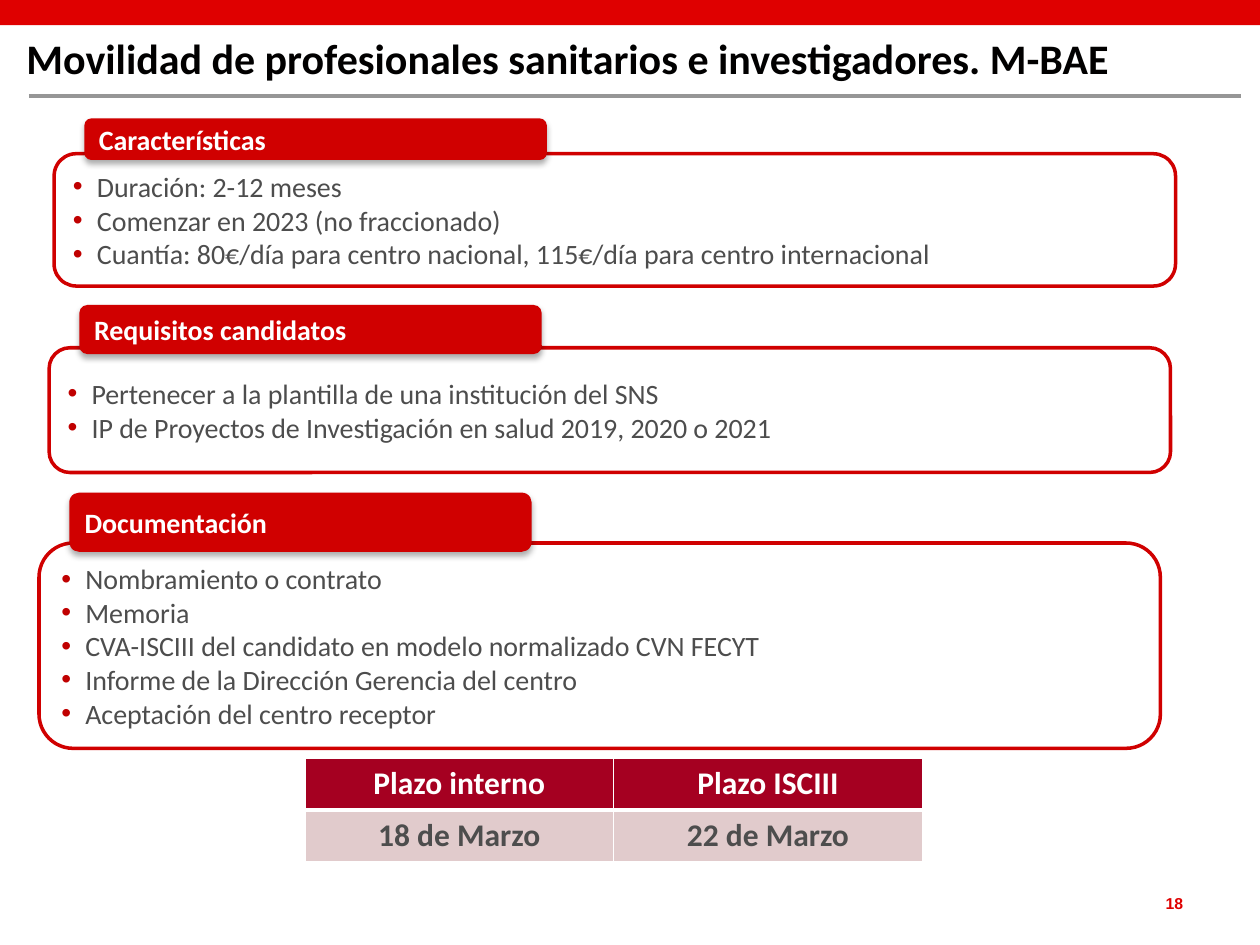
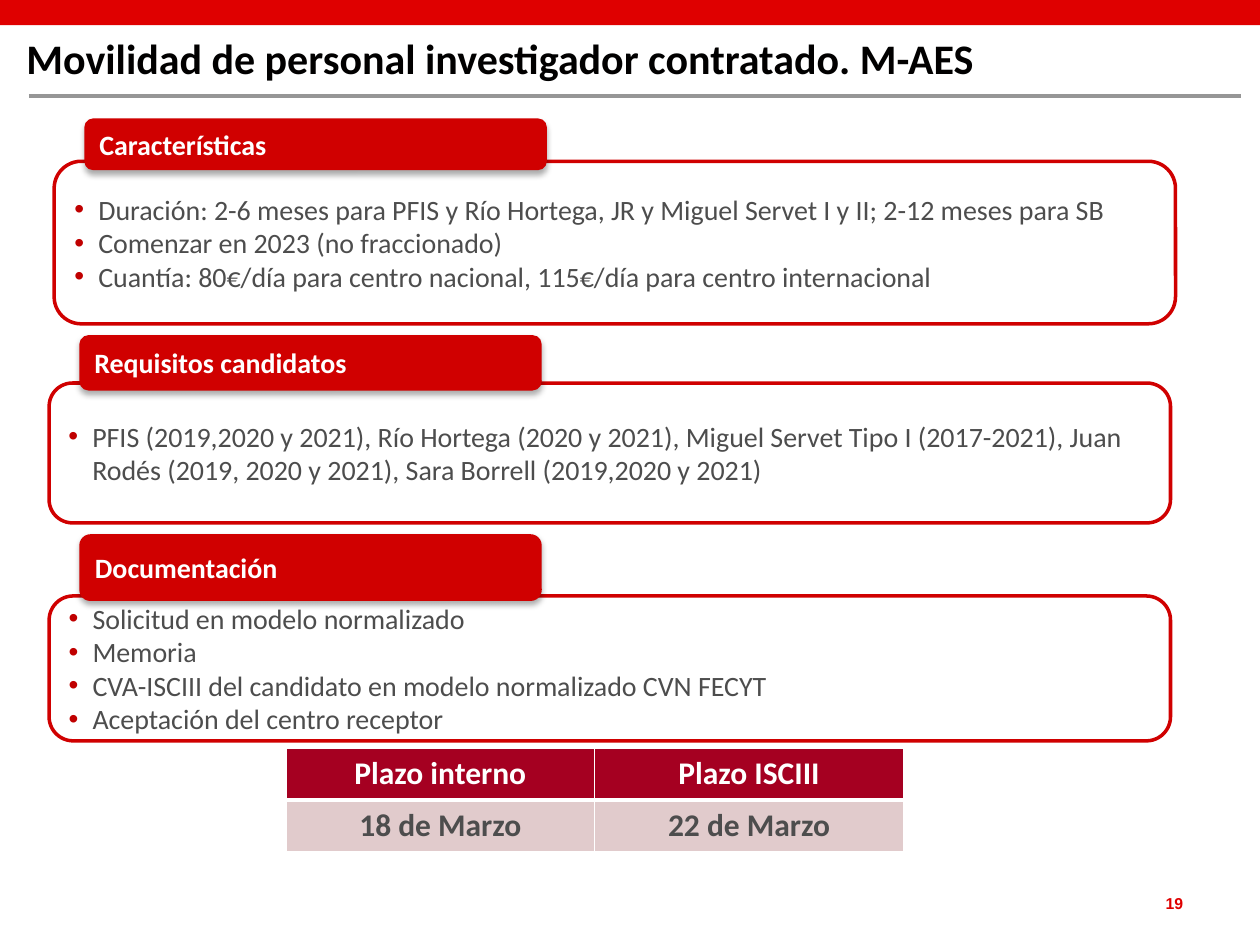
from lxml.etree import SubElement as sub
from pptx import Presentation
from pptx.dml.color import RGBColor as RGB
from pptx.enum.shapes import MSO_CONNECTOR as LINE, MSO_SHAPE as SHAPE
from pptx.enum.text import MSO_ANCHOR as ANCHOR, PP_ALIGN as ALIGN
from pptx.oxml.ns import qn
from pptx.util import Inches, Pt

BAND = RGB(0xDF, 0x00, 0x00)
RED = RGB(0xD0, 0x00, 0x00)
BULLET = "C00000"
WINE = RGB(0xA5, 0x00, 0x21)
ROSE = RGB(0xE1, 0xCB, 0xCC)
RULE = RGB(0x96, 0x96, 0x96)
INK = RGB(0x01, 0x00, 0x00)
GREY = RGB(0x4D, 0x4D, 0x4D)
WHITE = RGB(0xFF, 0xFF, 0xFF)

BOX_W, TAB_W, TAB_IN = 8.9, 3.67, 0.24
COL_W, ROW_H = 2.45, 0.41

# Each panel: heading, box left, tab top and height, box top and height, items
SLIDES = [
    ("Movilidad de profesionales sanitarios e investigadores. M-BAE", 18, (2.42, 6.02), [
        ("Características", 0.43, 0.94, 0.33, 1.22, 1.05, [
            "Duración: 2-12 meses",
            "Comenzar en 2023 (no fraccionado)",
            "Cuantía: 80€/día para centro nacional, 115€/día para centro internacional"]),
        ("Requisitos candidatos", 0.39, 2.42, 0.39, 2.76, 0.99, [
            "Pertenecer a la plantilla de una institución del SNS",
            "IP de Proyectos de Investigación en salud 2019, 2020 o 2021"]),
        ("Documentación", 0.31, 3.91, 0.47, 4.31, 1.63, [
            "Nombramiento o contrato",
            "Memoria",
            "CVA-ISCIII del candidato en modelo normalizado CVN FECYT",
            "Informe de la Dirección Gerencia del centro",
            "Aceptación del centro receptor"]),
    ]),
    ("Movilidad de personal investigador contratado. M-AES", 19, (2.27, 5.94), [
        ("Características", 0.43, 0.94, 0.41, 1.28, 1.29, [
            "Duración: 2-6 meses para PFIS y Río Hortega, JR y Miguel Servet I y II; "
            "2-12 meses para SB",
            "Comenzar en 2023 (no fraccionado)",
            "Cuantía: 80€/día para centro nacional, 115€/día para centro internacional"]),
        ("Requisitos candidatos", 0.39, 2.66, 0.44, 3.04, 1.11, [
            "PFIS (2019,2020 y 2021), Río Hortega (2020 y 2021), Miguel Servet Tipo I "
            "(2017-2021), Juan Rodés (2019, 2020 y 2021), Sara Borrell (2019,2020 y 2021)"]),
        ("Documentación", 0.39, 4.24, 0.53, 4.73, 1.15, [
            "Solicitud en modelo normalizado",
            "Memoria",
            "CVA-ISCIII del candidato en modelo normalizado CVN FECYT",
            "Aceptación del centro receptor"]),
    ]),
]
DATES = [("Plazo interno", "Plazo ISCIII"), ("18 de Marzo", "22 de Marzo")]


def write(para, text, size, color, bold=False, align=ALIGN.LEFT, font="Calibri"):
    para.alignment = align
    run = para.add_run()
    run.text = text
    run.font.name, run.font.size, run.font.bold = font, Pt(size), bold
    run.font.color.rgb = color


def block(shapes, kind, left, top, width, height, fill=None, line=None):
    """Add a preset shape with a plain fill or outline and no shadow."""
    shape = shapes.add_shape(kind, Inches(left), Inches(top), Inches(width), Inches(height))
    shape.shadow.inherit = False
    if fill is None:
        shape.fill.background()
    else:
        shape.fill.solid()
        shape.fill.fore_color.rgb = fill
    if line is None:
        shape.line.fill.background()
    else:
        shape.line.color.rgb = line
        shape.line.width = Pt(2)
    shape.text_frame.word_wrap = True
    shape.text_frame.vertical_anchor = ANCHOR.MIDDLE
    return shape


prs = Presentation()
prs.slide_width, prs.slide_height = Inches(10), Inches(7.5)

for title, number, (date_x, date_y), panels in SLIDES:
    shapes = prs.slides.add_slide(prs.slide_layouts[6]).shapes

    # Band, rule, page number and title
    block(shapes, SHAPE.RECTANGLE, 0, 0, 10, 0.2, fill=BAND)
    rule = shapes.add_connector(LINE.STRAIGHT, Inches(0.23), Inches(0.76),
                                Inches(9.85), Inches(0.76))
    rule.line.color.rgb = RULE
    rule.line.width = Pt(2.25)
    sub(rule._element.spPr, qn("a:effectLst"))

    for left, top, width, height, inset, style in [
        (8.45, 7.09, 0.94, 0.15, 0, (str(number), 9, BAND, True, ALIGN.RIGHT, "Arial")),
        (0.16, 0.21, 9.73, 0.9, 0.05, (title, 24, INK, True)),
    ]:
        frame = shapes.add_textbox(Inches(left), Inches(top), Inches(width),
                                   Inches(height)).text_frame
        frame.word_wrap = True
        frame.margin_left = frame.margin_right = Inches(inset)
        frame.margin_top = frame.margin_bottom = Inches(inset)
        write(frame.paragraphs[0], *style)

    # Outlined boxes, each with a red tab over its top edge
    for heading, left, tab_y, tab_h, box_y, box_h, items in panels:
        box = block(shapes, SHAPE.ROUNDED_RECTANGLE, left, box_y, BOX_W, box_h, line=RED)
        frame = box.text_frame
        for i, item in enumerate(items):
            para = frame.add_paragraph() if i else frame.paragraphs[0]
            props = para._p.get_or_add_pPr()
            props.set("marL", str(Inches(0.19)))
            props.set("indent", str(-Inches(0.19)))
            sub(sub(props, qn("a:buClr")), qn("a:srgbClr"), val=BULLET)
            sub(props, qn("a:buFont"), typeface="Arial")
            sub(props, qn("a:buChar"), char="•")
            write(para, item, 16, GREY)

        tab = block(shapes, SHAPE.ROUNDED_RECTANGLE, left + TAB_IN, tab_y, TAB_W, tab_h,
                    fill=RED)
        glow = sub(tab._element.spPr.find(qn("a:effectLst")), qn("a:outerShdw"),
                   blurRad=str(Pt(3.5)), dist=str(Pt(2.2)), dir="5400000", rotWithShape="0")
        shade = sub(glow, qn("a:srgbClr"), val="000000")
        sub(shade, qn("a:alpha"), val="32000")
        write(tab.text_frame.paragraphs[0], heading, 16, WHITE, True)

    # Deadlines
    table = shapes.add_table(2, 2, Inches(date_x), Inches(date_y),
                             Inches(2 * COL_W), Inches(2 * ROW_H)).table
    for r, row in enumerate(DATES):
        table.rows[r].height = Inches(ROW_H)
        for c, text in enumerate(row):
            table.columns[c].width = Inches(COL_W)
            cell = table.cell(r, c)
            props = cell._tc.get_or_add_tcPr()
            thick = "T" if r else "B"
            for side in "LRTB":
                edge = sub(props, qn("a:ln" + side), w=str(Pt(3 if side == thick else 1)))
                sub(sub(edge, qn("a:solidFill")), qn("a:srgbClr"), val=str(WHITE))
            cell.fill.solid()
            cell.fill.fore_color.rgb = ROSE if r else WINE
            write(cell.text_frame.paragraphs[0], text, 18, GREY if r else WHITE, True,
                  ALIGN.CENTER)

prs.save("out.pptx")
